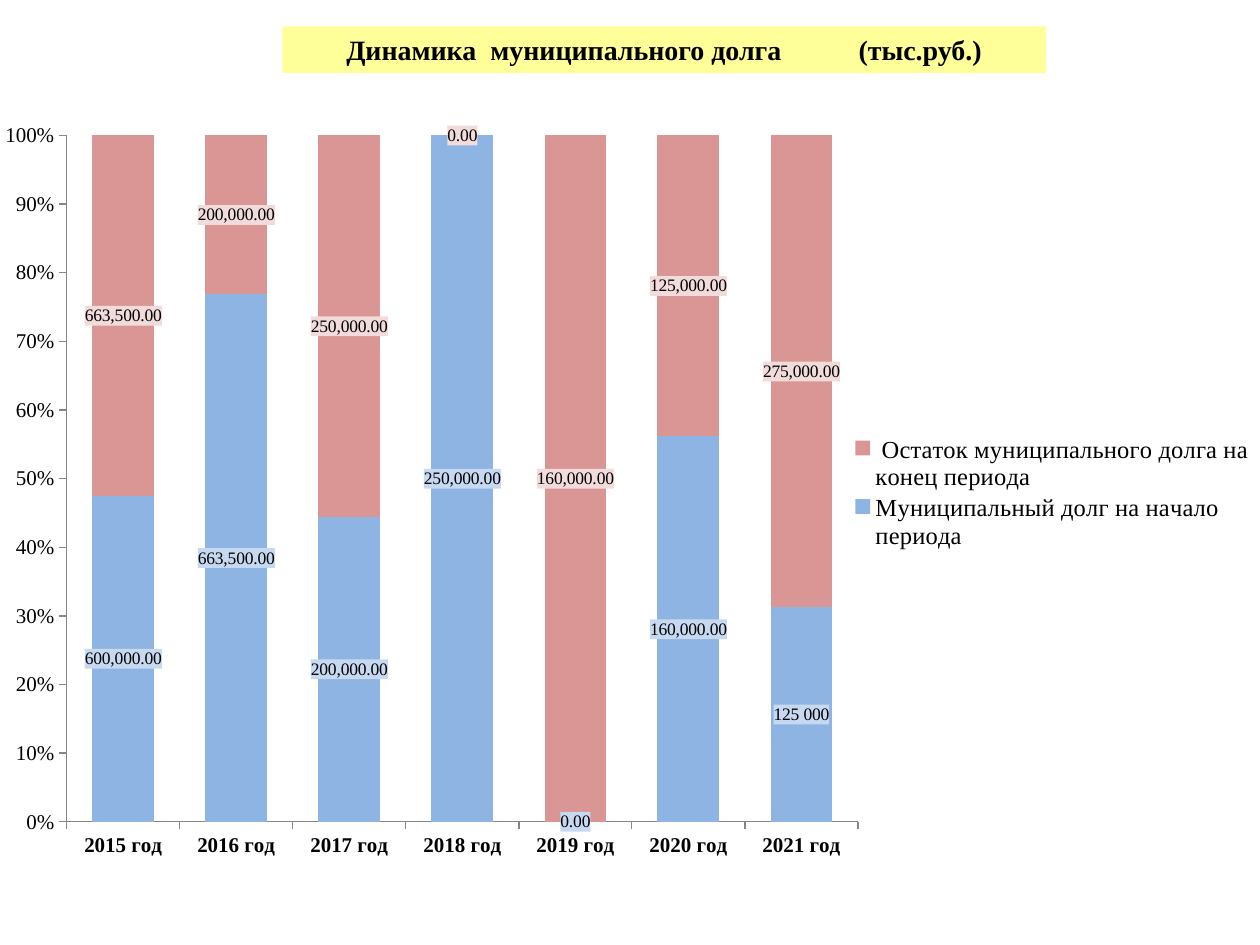
"""Build the slide showing the municipal debt trend as a stacked column chart."""
from dataclasses import dataclass

from lxml.etree import _Element
from pptx import Presentation
from pptx.chart.chart import Chart
from pptx.chart.data import CategoryChartData
from pptx.dml.color import RGBColor
from pptx.enum.chart import (
    XL_CHART_TYPE, XL_LABEL_POSITION, XL_LEGEND_POSITION, XL_TICK_MARK)
from pptx.enum.text import MSO_ANCHOR, MSO_AUTO_SIZE, PP_ALIGN
from pptx.oxml import parse_xml
from pptx.oxml.ns import nsdecls, qn
from pptx.slide import Slide
from pptx.text.text import Font
from pptx.util import Inches, Pt

STACKED = XL_CHART_TYPE.COLUMN_STACKED_100
LABEL_CENTER = XL_LABEL_POSITION.CENTER
LEGEND_RIGHT = XL_LEGEND_POSITION.RIGHT
TICK_OUT = XL_TICK_MARK.OUTSIDE
MIDDLE = MSO_ANCHOR.MIDDLE
NO_AUTOFIT = MSO_AUTO_SIZE.NONE
CENTER = PP_ALIGN.CENTER
AMOUNT_FORMAT = "#,##0.00"
TITLE_ONLY = 5


@dataclass(frozen=True)
class Theme:
    """Colours, typefaces and type sizes of the slide."""

    face: str = "Times New Roman"
    chart_face: str = "Calibri"
    text: str = "000000"
    banner: str = "FFFF99"
    axis: str = "868686"
    title_size: int = 16
    legend_size: int = 14
    axis_size: int = 12
    label_size: int = 10


@dataclass(frozen=True)
class DebtSeries:
    """One debt series with its colours and any rewritten labels."""

    name: str
    amounts: tuple[int, ...]
    color: str
    label_color: str
    rewritten: tuple[tuple[int, str], ...] = ()


@dataclass(frozen=True)
class Region:
    """A part of the chart, in fractions of its width and height."""

    left: float
    top: float
    width: float
    height: float


THEME = Theme()
YEARS = [f"{year} год" for year in range(2015, 2022)]
SERIES = (
    DebtSeries("Муниципальный долг на начало периода",
               (600000, 663500, 200000, 250000, 0, 160000, 125000),
               "8EB4E3", "C6D9F1", ((6, "125 000"),)),
    DebtSeries(" Остаток муниципального долга на конец периода",
               (663500, 200000, 250000, 0, 160000, 125000, 275000),
               "D99694", "F2DCDB"),
)
TITLE_PARTS = (("Динамика", 4), ("муниципального долга", 40), ("(тыс.руб.)", 0))
PLOT_REGION = Region(0.053, 0.026, 0.628, 0.911)
LEGEND_REGION = Region(0.67, 0.42, 0.33, 0.16)


def style_font(font: Font, size: int, bold: bool = False, face: str = THEME.face) -> None:
    """Apply typeface, size, weight and the text colour."""
    font.name = face
    font.size = Pt(size)
    font.bold = bold
    font.color.rgb = RGBColor.from_string(THEME.text)


def place_region(parent: _Element, region: Region, index: int, inner: bool = False) -> None:
    """Give a chart part a manual layout."""
    for layout in parent.findall(qn("c:layout")):
        parent.remove(layout)
    target = '<c:layoutTarget val="inner"/>' if inner else ""
    parent.insert(index, parse_xml(
        f'<c:layout {nsdecls("c")}><c:manualLayout>{target}'
        '<c:xMode val="edge"/><c:yMode val="edge"/>'
        f'<c:x val="{region.left}"/><c:y val="{region.top}"/>'
        f'<c:w val="{region.width}"/><c:h val="{region.height}"/>'
        '</c:manualLayout></c:layout>'))


def fill_label(previous: _Element, color: str) -> None:
    """Insert a solid label background after the given element."""
    previous.addnext(parse_xml(
        f'<c:spPr {nsdecls("c", "a")}><a:solidFill><a:srgbClr val="{color}"/>'
        '</a:solidFill></c:spPr>'))


def add_title(slide: Slide) -> None:
    """Turn the title placeholder into the yellow banner."""
    title = slide.shapes.title
    title.left, title.top = Inches(2.24), Inches(0.21)
    title.width, title.height = Inches(6.06), Inches(0.37)
    title.fill.solid()
    title.fill.fore_color.rgb = RGBColor.from_string(THEME.banner)
    frame = title.text_frame
    frame.auto_size = NO_AUTOFIT
    frame.word_wrap = True
    frame.vertical_anchor = MIDDLE
    para = frame.paragraphs[0]
    para.alignment = CENTER
    style_font(para.font, THEME.title_size, bold=True)
    for words, gap in TITLE_PARTS:
        span = para.add_run()
        span.text = words
        style_font(span.font, THEME.title_size, bold=True)
        if gap:
            space = para.add_run()
            space.text = " "
            style_font(space.font, THEME.title_size, bold=True)
            space.font._element.set("spc", str(gap * 100))


def style_axes(chart: Chart) -> None:
    """Format the year axis and the percentage axis."""
    for axis, bold in ((chart.category_axis, True), (chart.value_axis, False)):
        axis.has_major_gridlines = False
        axis.major_tick_mark = TICK_OUT
        axis.format.line.color.rgb = RGBColor.from_string(THEME.axis)
        axis.format.line.width = Pt(0.75)
        style_font(axis.tick_labels.font, THEME.axis_size, bold)
    percentages = chart.value_axis.tick_labels
    percentages.number_format = "0%"
    percentages.number_format_is_linked = False


def style_series(chart: Chart) -> None:
    """Colour the columns and their value labels."""
    for series, debt in zip(chart.plots[0].series, SERIES):
        series.format.fill.solid()
        series.format.fill.fore_color.rgb = RGBColor.from_string(debt.color)
        series.invert_if_negative = False
        labels = series.data_labels
        labels.show_value = True
        labels.number_format = AMOUNT_FORMAT
        labels.number_format_is_linked = False
        labels.position = LABEL_CENTER
        style_font(labels.font, THEME.label_size)
        fill_label(labels._element.find(qn("c:numFmt")), debt.label_color)
        for index, words in debt.rewritten:
            label = series.points[index].data_label
            para = label.text_frame.paragraphs[0]
            span = para.add_run()
            span.text = words
            style_font(span.font, THEME.label_size)
            label.position = LABEL_CENTER
            item = labels._element.find(qn("c:dLbl"))
            fill_label(item.find(qn("c:tx")), debt.label_color)


def add_debt_chart(slide: Slide) -> None:
    """Add the chart of opening and closing debt by year."""
    chart_data = CategoryChartData(number_format=AMOUNT_FORMAT)
    chart_data.categories = YEARS
    for debt in SERIES:
        chart_data.add_series(debt.name, debt.amounts)
    chart = slide.shapes.add_chart(
        STACKED, Inches(0), Inches(0.92), Inches(10), Inches(5.98), chart_data).chart
    chart.has_title = False
    style_font(chart.font, THEME.label_size, face=THEME.chart_face)
    plot = chart.plots[0]
    plot.gap_width = 83
    plot.overlap = 100
    plot.vary_by_categories = False
    style_axes(chart)
    style_series(chart)
    chart.has_legend = True
    chart.legend.position = LEGEND_RIGHT
    chart.legend.include_in_layout = False
    style_font(chart.legend.font, THEME.legend_size)
    place_region(chart._chartSpace.chart.plotArea, PLOT_REGION, 0, inner=True)
    place_region(chart.legend._element, LEGEND_REGION, 1)


def main() -> None:
    """Build and save the deck."""
    deck = Presentation()
    deck.slide_width, deck.slide_height = Inches(10), Inches(7.5)
    slide = deck.slides.add_slide(deck.slide_layouts[TITLE_ONLY])
    add_title(slide)
    add_debt_chart(slide)
    deck.save("out.pptx")


if __name__ == "__main__":
    main()
